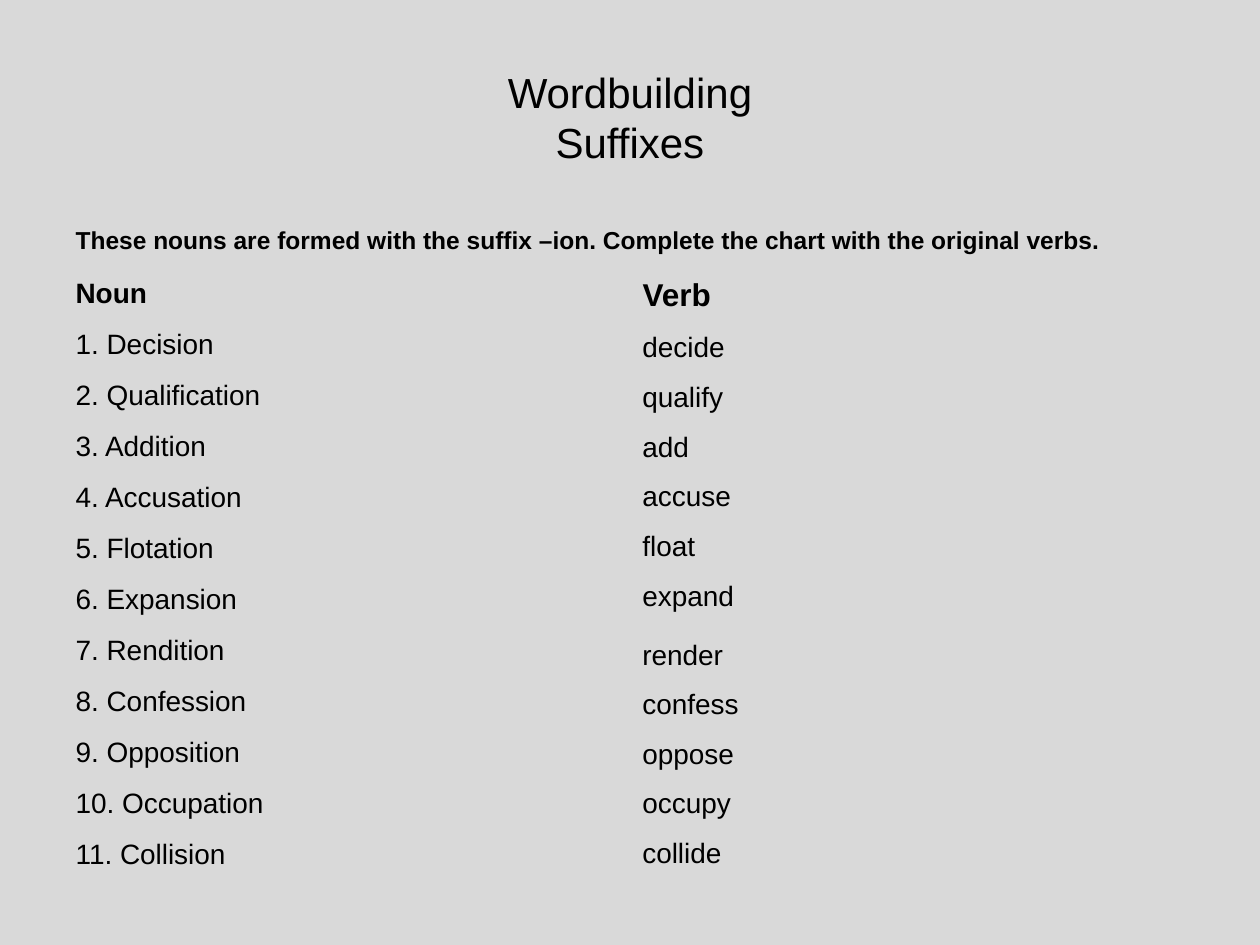
from pptx import Presentation
from pptx.dml.color import RGBColor
from pptx.enum.text import MSO_ANCHOR, MSO_AUTO_SIZE, PP_ALIGN
from pptx.util import Inches, Pt

COLORS = {"background": "D9D9D9", "text": "000000"}
NO_GRID_STYLE = "{2D5ABB26-0587-4C30-8999-92F81FD0307C}"
NOUNS = ["Decision", "Qualification", "Addition", "Accusation", "Flotation", "Expansion",
         "Rendition", "Confession", "Opposition", "Occupation", "Collision"]
VERB_GROUPS = [
    (2.57, 4.54, ["decide", "qualify", "add", "accuse", "float", "expand"]),
    (5.01, 6.58, ["render", "confess", "oppose", "occupy", "collide"]),
]


def write_text(text_frame, text, size=16, bold=False, align=PP_ALIGN.LEFT):
    text_frame.word_wrap = True
    paragraph = text_frame.paragraphs[0]
    paragraph.text = text
    paragraph.alignment = align
    for run in paragraph.runs:
        run.font.name = "Arial"
        run.font.size = Pt(size)
        run.font.bold = bold
        run.font.color.rgb = RGBColor.from_string(COLORS["text"])


presentation = Presentation()
presentation.slide_width = Inches(10)
presentation.slide_height = Inches(7.5)
slide = presentation.slides.add_slide(presentation.slide_layouts[6])
slide.background.fill.solid()
slide.background.fill.fore_color.rgb = RGBColor.from_string(COLORS["background"])

title = slide.shapes.add_textbox(Inches(0.5), Inches(0.3), Inches(9), Inches(1.25))
title.text_frame.vertical_anchor = MSO_ANCHOR.MIDDLE
write_text(title.text_frame, "Wordbuilding\vSuffixes", size=24, align=PP_ALIGN.CENTER)

row_count = len(NOUNS) + 2
table_shape = slide.shapes.add_table(
    row_count, 2, Inches(0.5), Inches(1.75), Inches(9), Inches(5.27))
table = table_shape.table
table.first_row = False
table.horz_banding = False
table._tbl.tblPr.find("{*}tableStyleId").text = NO_GRID_STYLE
for row in table.rows:
    row.height = Inches(5.27 / row_count)
for cell in table.iter_cells():
    cell.fill.background()

table.cell(0, 0).merge(table.cell(0, 1))
instruction = "These nouns are formed with the suffix –ion. Complete the chart with the original verbs."
write_text(table.cell(0, 0).text_frame, instruction, size=14, bold=True)
write_text(table.cell(1, 0).text_frame, "Noun", size=16, bold=True)
write_text(table.cell(1, 1).text_frame, "Verb", size=18, bold=True)
for number, noun in enumerate(NOUNS, start=1):
    write_text(table.cell(number + 1, 0).text_frame, f"{number}. {noun}")

for first_top, last_top, verbs in VERB_GROUPS:
    step = (last_top - first_top) / (len(verbs) - 1)
    for index, verb in enumerate(verbs):
        answer = slide.shapes.add_textbox(
            Inches(5), Inches(first_top + index * step), Inches(3.46), Inches(0.37))
        answer.text_frame.auto_size = MSO_AUTO_SIZE.SHAPE_TO_FIT_TEXT
        write_text(answer.text_frame, verb)

presentation.save("out.pptx")
